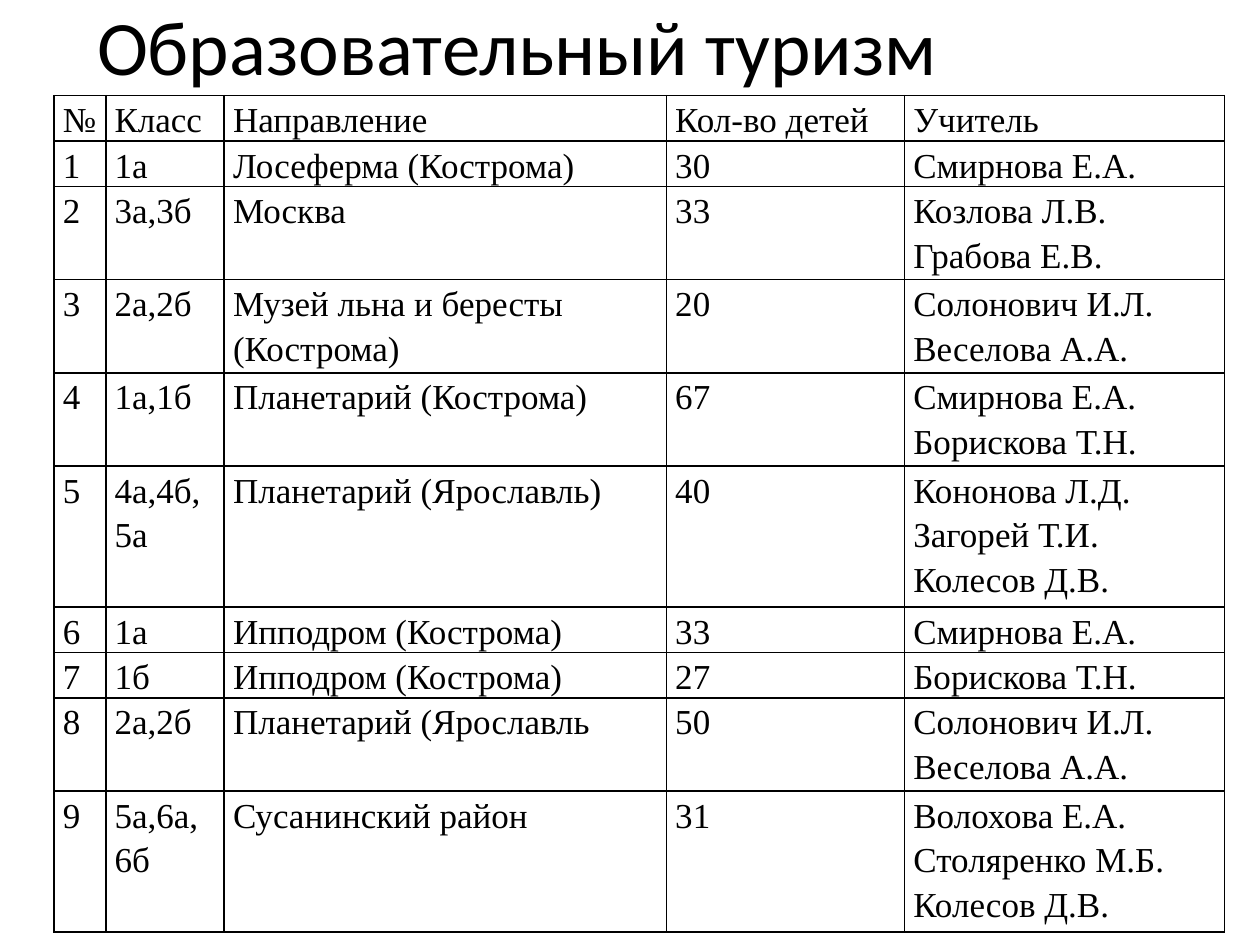
from lxml.etree import SubElement
from pptx import Presentation
from pptx.dml.color import RGBColor
from pptx.enum.text import MSO_ANCHOR, MSO_AUTO_SIZE, PP_ALIGN
from pptx.oxml.ns import qn
from pptx.util import Inches, Pt

COLORS = {"text": "000000", "border": "000000", "page": "FFFFFF"}
TITLE_FONT = {"name": "Calibri", "size": Pt(44), "bold": False}
CELL_FONT = {"name": "Times New Roman", "size": Pt(20), "bold": False}
CELL_FORMAT = {
    "margin_left": Inches(0.07),
    "margin_right": Inches(0.07),
    "margin_top": 0,
    "margin_bottom": 0,
    "vertical_anchor": MSO_ANCHOR.TOP,
}
COLUMN_WIDTHS = [0.41, 0.94, 3.51, 1.89, 2.54]
FIRST_LINE, NEXT_LINE = 0.36, 0.38
TRIPS = [
    ("№", "Класс", "Направление", "Кол-во детей", "Учитель"),
    ("1", "1а", "Лосеферма (Кострома)", "30", "Смирнова Е.А."),
    ("2", "3а,3б", "Москва", "33", "Козлова Л.В.\nГрабова Е.В."),
    ("3", "2а,2б", "Музей льна и бересты (Кострома)", "20", "Солонович И.Л.\nВеселова А.А."),
    ("4", "1а,1б", "Планетарий (Кострома)", "67", "Смирнова Е.А.\nБорискова Т.Н."),
    ("5", "4а,4б,5а", "Планетарий (Ярославль)", "40", "Кононова Л.Д.\nЗагорей Т.И.\nКолесов Д.В."),
    ("6", "1а", "Ипподром (Кострома)", "33", "Смирнова Е.А."),
    ("7", "1б", "Ипподром (Кострома)", "27", "Борискова Т.Н."),
    ("8", "2а,2б", "Планетарий (Ярославль", "50", "Солонович И.Л.\nВеселова А.А."),
    ("9", "5а,6а,6б", "Сусанинский район", "31", "Волохова Е.А.\nСтоляренко М.Б.\nКолесов Д.В."),
]


def apply_format(target, values):
    """Set each named attribute on the target."""
    for name, value in values.items():
        setattr(target, name, value)


def style_paragraph(para, font, spacing):
    """Give a paragraph its spacing, alignment, font and text colour."""
    apply_format(para, {"line_spacing": spacing, "alignment": PP_ALIGN.LEFT})
    for span in para.runs:
        apply_format(span.font, font)
        span.font.color.rgb = RGBColor.from_string(COLORS["text"])


def add_borders(cell):
    """Draw a thin line on all four sides of a cell."""
    properties = cell._tc.get_or_add_tcPr()
    for position, side in enumerate(("a:lnL", "a:lnR", "a:lnT", "a:lnB")):
        line = SubElement(properties, qn(side), w=str(Pt(1)))
        properties.insert(position, line)
        fill = SubElement(line, qn("a:solidFill"))
        SubElement(fill, qn("a:srgbClr"), val=COLORS["border"])


def place_title(page, left, top, width, height):
    """Place and format the title placeholder in the given box."""
    title = page.shapes.title
    apply_format(title, {"left": left, "top": top, "width": width, "height": height})
    frame = title.text_frame
    frame.text = "Образовательный туризм"
    apply_format(frame, {"vertical_anchor": MSO_ANCHOR.MIDDLE, "word_wrap": True,
                         "auto_size": MSO_AUTO_SIZE.NONE})
    style_paragraph(frame.paragraphs[0], TITLE_FONT, 0.9)


def fill_cell(cell, text):
    """Write the text of one cell and style it."""
    cell.text = text
    apply_format(cell, CELL_FORMAT)
    cell.fill.solid()
    cell.fill.fore_color.rgb = RGBColor.from_string(COLORS["page"])
    add_borders(cell)
    for para in cell.text_frame.paragraphs:
        style_paragraph(para, CELL_FONT, 1.15)


def place_trip_table(page, left, top, width, height):
    """Place the table of class trips in the given box."""
    table = page.shapes.add_table(
        len(TRIPS), len(COLUMN_WIDTHS), left, top, width, height).table
    apply_format(table, {"first_row": False, "horz_banding": False})
    for column, column_width in zip(table.columns, COLUMN_WIDTHS):
        column.width = Inches(column_width)
    for row, trip in zip(table.rows, TRIPS):
        row.height = Inches(FIRST_LINE + NEXT_LINE * trip[-1].count("\n"))
        for cell, text in zip(row.cells, trip):
            fill_cell(cell, text)


def main():
    """Build the slide and save the deck."""
    deck = Presentation()
    apply_format(deck, {"slide_width": Inches(10), "slide_height": Inches(7.5)})
    page = deck.slides.add_slide(deck.slide_layouts[5])
    place_title(page, Inches(0.67), Inches(0), Inches(9), Inches(0.81))
    place_trip_table(page, Inches(0.43), Inches(0.76), Inches(9.29), Inches(6.64))
    deck.save("out.pptx")


if __name__ == "__main__":
    main()
